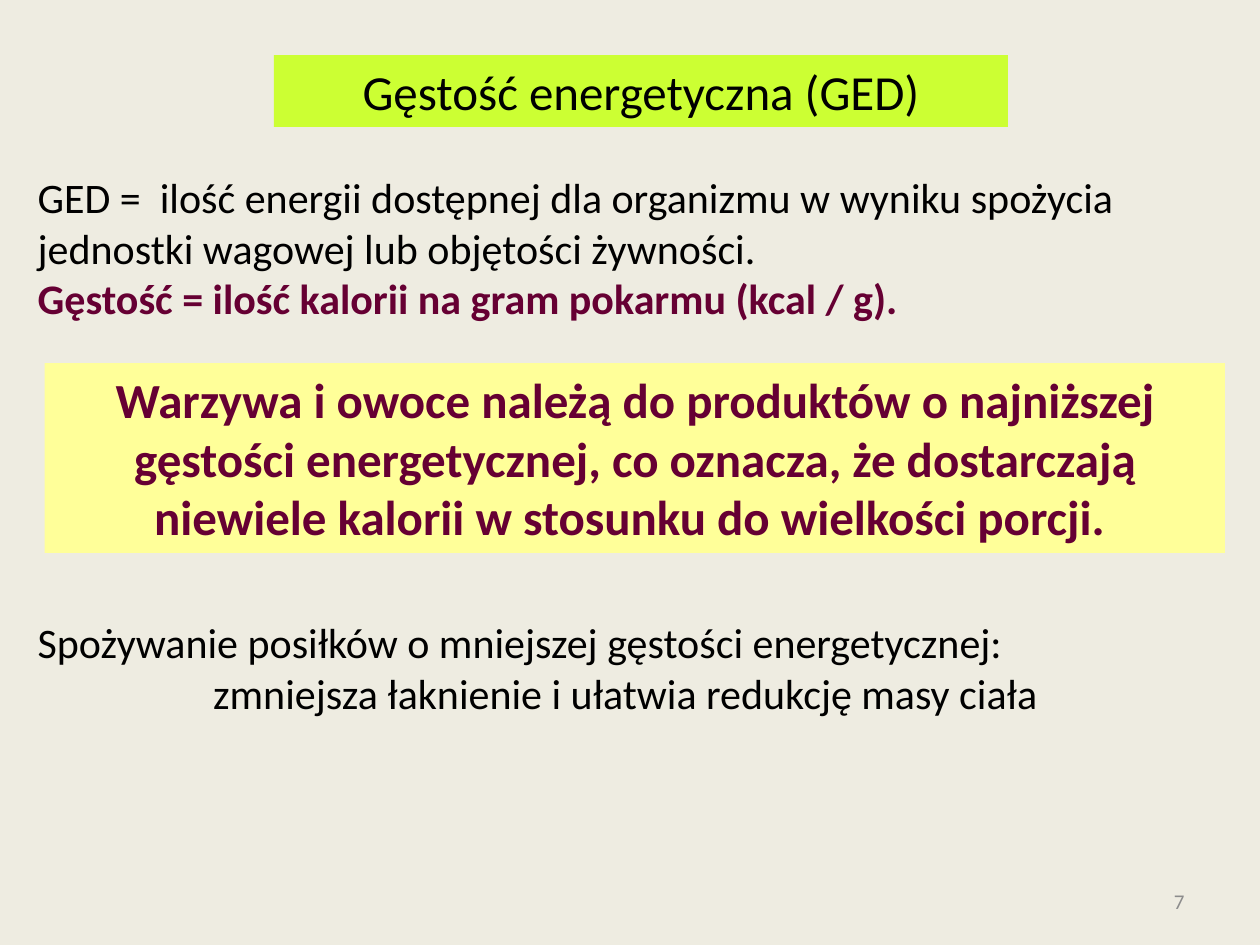
"""Build the slide on the energy density of food."""
from dataclasses import dataclass
from typing import Any

import pptx
import pptx.dml.color
import pptx.enum.text
import pptx.util

Pt = pptx.util.Pt
RGBColor = pptx.dml.color.RGBColor
Align = pptx.enum.text.PP_ALIGN
Anchor = pptx.enum.text.MSO_ANCHOR

BACKGROUND = RGBColor(0xEE, 0xEC, 0xE1)
LIME = RGBColor(0xCC, 0xFF, 0x33)
YELLOW = RGBColor(0xFF, 0xFF, 0x99)
BLACK = RGBColor(0, 0, 0)
BURGUNDY = RGBColor(0x66, 0x00, 0x33)
GRAY = RGBColor(0x8C, 0x8C, 0x8C)


@dataclass(frozen=True)
class Line:
    text: str
    size: float = 24
    color: RGBColor = BLACK
    bold: bool = False
    alignment: Align = Align.LEFT


@dataclass(frozen=True)
class Block:
    left: float
    top: float
    width: float
    height: float
    lines: tuple[Line, ...]
    fill: RGBColor | None = None
    anchor: Anchor = Anchor.TOP


TITLE = Block(156.5, 31.5, 419.5, 41, (
    Line("Gęstość energetyczna (GED)", 28, alignment=Align.CENTER),), LIME)

BLOCKS = (
    Block(14.4, 94.5, 686, 131, (
        Line("GED =  ilość energii dostępnej dla organizmu w wyniku spożycia "
             "jednostki wagowej lub objętości żywności."),
        Line("Gęstość = ilość kalorii na gram pokarmu (kcal / g).",
             color=BURGUNDY, bold=True))),
    Block(25.5, 207.5, 674.5, 108.5, (
        Line("Warzywa i owoce należą do produktów o najniższej gęstości "
             "energetycznej, co oznacza, że dostarczają niewiele kalorii "
             "w stosunku do wielkości porcji. ",
             28, BURGUNDY, True, Align.CENTER),), YELLOW),
    Block(14.4, 349, 686, 65.5, (
        Line("Spożywanie posiłków o mniejszej gęstości energetycznej:"),
        Line("zmniejsza łaknienie i ułatwia redukcję masy ciała",
             alignment=Align.CENTER))),
    Block(516, 500.5, 168, 28.8, (
        Line("7", 12, GRAY, alignment=Align.RIGHT),), anchor=Anchor.MIDDLE),
)


def apply_format(target: Any, values: dict[str, Any]) -> None:
    for name, value in values.items():
        setattr(target, name, value)


def fill_block(shape: Any, block: Block) -> None:
    apply_format(shape, {
        "left": Pt(block.left), "top": Pt(block.top),
        "width": Pt(block.width), "height": Pt(block.height)})
    if block.fill is not None:
        shape.fill.solid()
        shape.fill.fore_color.rgb = block.fill
    frame = shape.text_frame
    apply_format(frame, {
        "word_wrap": True, "vertical_anchor": block.anchor,
        "auto_size": pptx.enum.text.MSO_AUTO_SIZE.NONE})
    for index, line in enumerate(block.lines):
        paragraph = frame.add_paragraph() if index else frame.paragraphs[0]
        paragraph.alignment = line.alignment
        run = paragraph.add_run()
        run.text = line.text
        apply_format(run.font, {
            "name": "Calibri", "size": Pt(line.size), "bold": line.bold})
        run.font.color.rgb = line.color


def main() -> None:
    presentation = pptx.Presentation()
    apply_format(presentation, {"slide_width": Pt(720), "slide_height": Pt(540)})
    slide = presentation.slides.add_slide(presentation.slide_layouts[5])
    slide.background.fill.solid()
    slide.background.fill.fore_color.rgb = BACKGROUND
    fill_block(slide.shapes.title, TITLE)
    for block in BLOCKS:
        fill_block(slide.shapes.add_textbox(0, 0, 0, 0), block)
    presentation.save("out.pptx")


if __name__ == "__main__":
    main()
